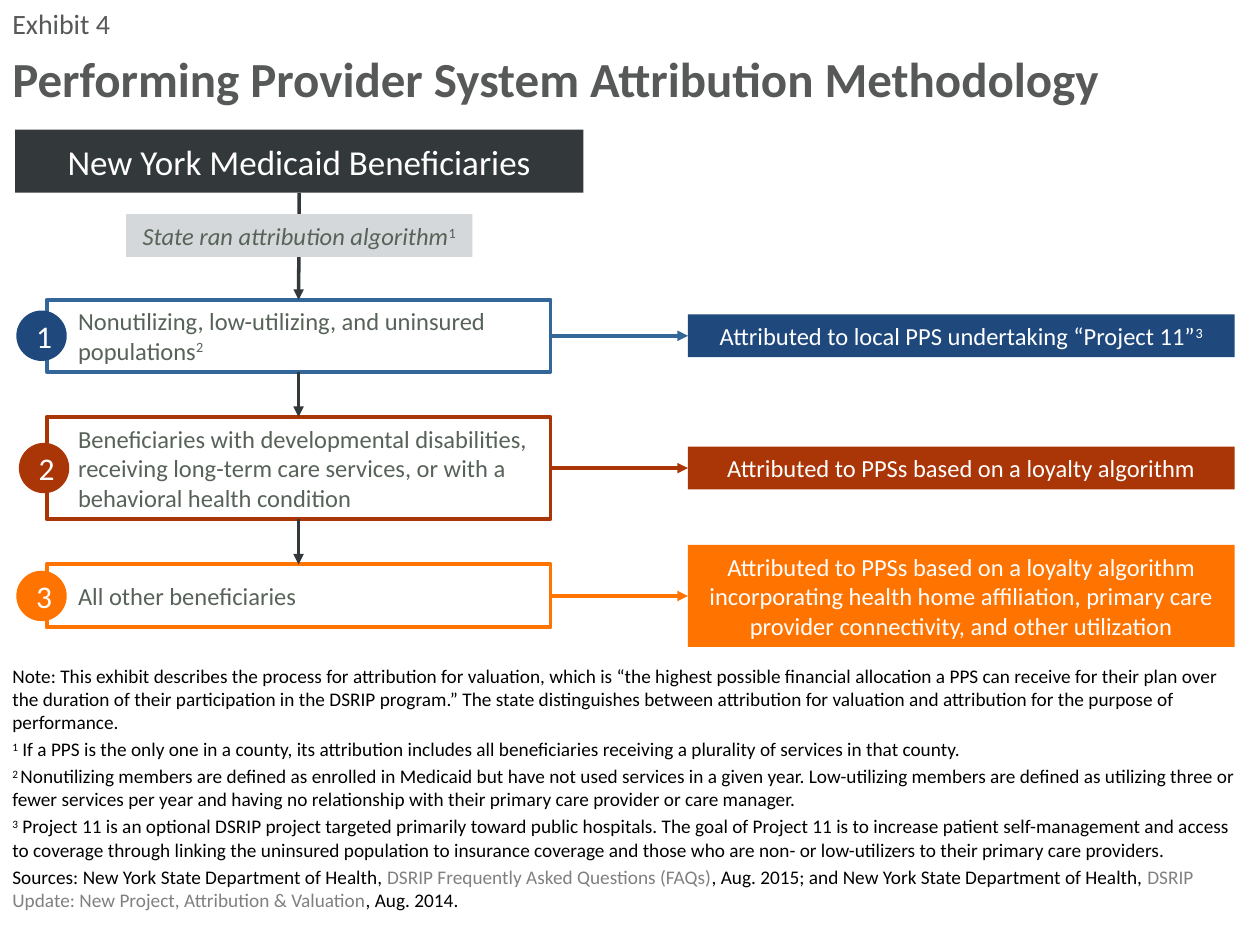
from lxml import etree
from pptx import Presentation
from pptx import util as u
from pptx.dml.color import RGBColor
from pptx.enum import shapes, text
from pptx.oxml.ns import qn

DARK, GREY, BODY, PALE, WHITE = "33383B", "575959", "576258", "D4D8DA", "FFFFFF"
MID, TOP, END = (text.MSO_ANCHOR.MIDDLE, text.MSO_ANCHOR.TOP, text.MSO_ANCHOR.BOTTOM)
RECT, OVAL = shapes.MSO_SHAPE.RECTANGLE, shapes.MSO_SHAPE.OVAL

# Content: a paragraph is a list of runs; "sup" raises a run, "link" greys it
HEAD = [("Exhibit 4", "")]
TITLE = [("Performing Provider System Attribution Methodology", "")]
START = [("New York Medicaid Beneficiaries", "")]
LABEL = [("State ran attribution algorithm", "ital"), ("1", "sup")]

# Each step: box text, box height, line colour, fill colour, badge left, result, result height
STEPS = [
    ([("Nonutilizing, low-utilizing, and uninsured populations", ""), ("2", "sup")],
     0.57, "336699", "1F497D", 0.13,
     [("Attributed to local PPS undertaking “Project 11”", ""), ("3", "sup")], 0.34),
    ([("Beneficiaries with developmental disabilities, receiving long-term care "
       "services, or with a behavioral health condition", "")],
     0.81, "AA3607", "AA3607", 0.15,
     [("Attributed to PPSs based on a loyalty algorithm", "")], 0.34),
    ([("All other beneficiaries", "")],
     0.5, "FF7300", "FF7300", 0.13,
     [("Attributed to PPSs based on a loyalty algorithm incorporating health home "
       "affiliation, primary care provider connectivity, and other utilization", "")], 0.81),
]

NOTES = [
    [("Note: This exhibit describes the process for attribution for valuation, which is "
      "“the highest possible financial allocation a PPS can receive for their plan over "
      "the duration of their participation in the DSRIP program.” The state distinguishes "
      "between attribution for valuation and attribution for the purpose of performance.", "")],
    [("1", "sup"),
     (" If a PPS is the only one in a county, its attribution includes all beneficiaries "
      "receiving a plurality of services in that county.", "")],
    [("2 ", "sup"),
     ("Nonutilizing members are defined as enrolled in Medicaid but have not used services "
      "in a given year. Low-utilizing members are defined as utilizing three or fewer "
      "services per year and having no relationship with their primary care provider or "
      "care manager.", "")],
    [("3", "sup"),
     (" Project 11 is an optional DSRIP project targeted primarily toward public hospitals. "
      "The goal of Project 11 is to increase patient self-management and access to coverage "
      "through linking the uninsured population to insurance coverage and those who are "
      "non- or low-utilizers to their primary care providers.", "")],
    [("Sources: New York State Department of Health, ", ""),
     ("DSRIP Frequently Asked Questions (FAQs)", "link"),
     (", Aug. 2015; and New York State Department of Health, ", ""),
     ("DSRIP Update: New Project, Attribution & Valuation", "link"),
     (", Aug. 2014.", "")],
]


def rgb(code):
    return RGBColor.from_string(code)


def write(shape, paras, size, color, anchor=MID, align=text.PP_ALIGN.LEFT, left=0.1, bold=False):
    frame = shape.text_frame
    form = dict(word_wrap=True, vertical_anchor=anchor,
                margin_left=u.Inches(left), margin_right=u.Inches(0.1),
                margin_top=u.Inches(0.05), margin_bottom=u.Inches(0.05))
    for name, value in form.items():
        setattr(frame, name, value)
    for i, runs in enumerate(paras):
        para = frame.add_paragraph() if i else frame.paragraphs[0]
        para.alignment = align
        para.space_before = u.Pt(0.2 * size if i else 0)
        for words, style in runs:
            run = para.add_run()
            run.text = words
            look = dict(name="Calibri", size=u.Pt(size), bold=bold, italic=style == "ital")
            for name, value in look.items():
                setattr(run.font, name, value)
            run.font.color.rgb = rgb("808080" if style == "link" else color)
            if style == "sup":
                run._r.get_or_add_rPr().set("baseline", "30000")


def label(slide, box, paras, size, color, **form):
    write(slide.shapes.add_textbox(*map(u.Inches, box)), paras, size, color, **form)


def block(slide, kind, box, runs, size, color, fill=None, line=None, **form):
    shape = slide.shapes.add_shape(kind, *map(u.Inches, box))
    shape.shadow.inherit = False
    if fill:
        shape.fill.solid()
        shape.fill.fore_color.rgb = rgb(fill)
    else:
        shape.fill.background()
    if line:
        shape.line.color.rgb = rgb(line)
        shape.line.width = u.Pt(2.25)
    else:
        shape.line.fill.background()
    write(shape, [runs], size, color, **form)
    return shape


def arrow(slide, one, side, two, end, color):
    link = slide.shapes.add_connector(shapes.MSO_CONNECTOR.STRAIGHT, 0, 0, 0, 0)
    link.begin_connect(one, side)
    link.end_connect(two, end)
    link.line.color.rgb = rgb(color)
    link.line.width = u.Pt(2)
    etree.SubElement(link.line._get_or_add_ln(), qn("a:tailEnd"), type="triangle")
    etree.SubElement(link._element.spPr, qn("a:effectLst"))


def main():
    deck = Presentation()
    deck.slide_width, deck.slide_height = u.Inches(10), u.Inches(7.5)
    slide = deck.slides.add_slide(deck.slide_layouts[6])
    mid = dict(align=text.PP_ALIGN.CENTER)

    # Heading and notes
    label(slide, (0, 0, 10, 0.33), [HEAD], 16, GREY, anchor=TOP)
    label(slide, (0, 0.33, 10, 0.57), [TITLE], 28, GREY, bold=True)
    label(slide, (0, 5.44, 10, 1.84), NOTES, 11, "000000", anchor=END)

    # Flow: each step hangs below the last, its result level with it
    last = block(slide, RECT, (0.12, 1.03, 4.51, 0.5), START, 20, WHITE, DARK, **mid)
    top, gap, disc = 2.38, 0.36, 0.4
    for i, (runs, high, edge, fill, left, result, tall) in enumerate(STEPS, 1):
        axis = top + high / 2
        step = block(slide, RECT, (0.37, top, 4, high), runs, 14, BODY, line=edge, left=0.25)
        block(slide, OVAL, (left, axis - disc / 2, disc, disc), [(str(i), "")],
              18, WHITE, fill, **mid)
        goal = block(slide, RECT, (5.46, axis - tall / 2, 4.34, tall), result,
                     14, WHITE, fill, **mid)
        arrow(slide, last, 2, step, 0, DARK)
        arrow(slide, step, 3, goal, 1, edge)
        last, top = step, top + high + gap

    # Label over the first arrow
    block(slide, RECT, (1, 1.7, 2.75, 0.34), LABEL, 14, BODY, PALE, **mid)
    deck.save("out.pptx")


if __name__ == "__main__":
    main()
